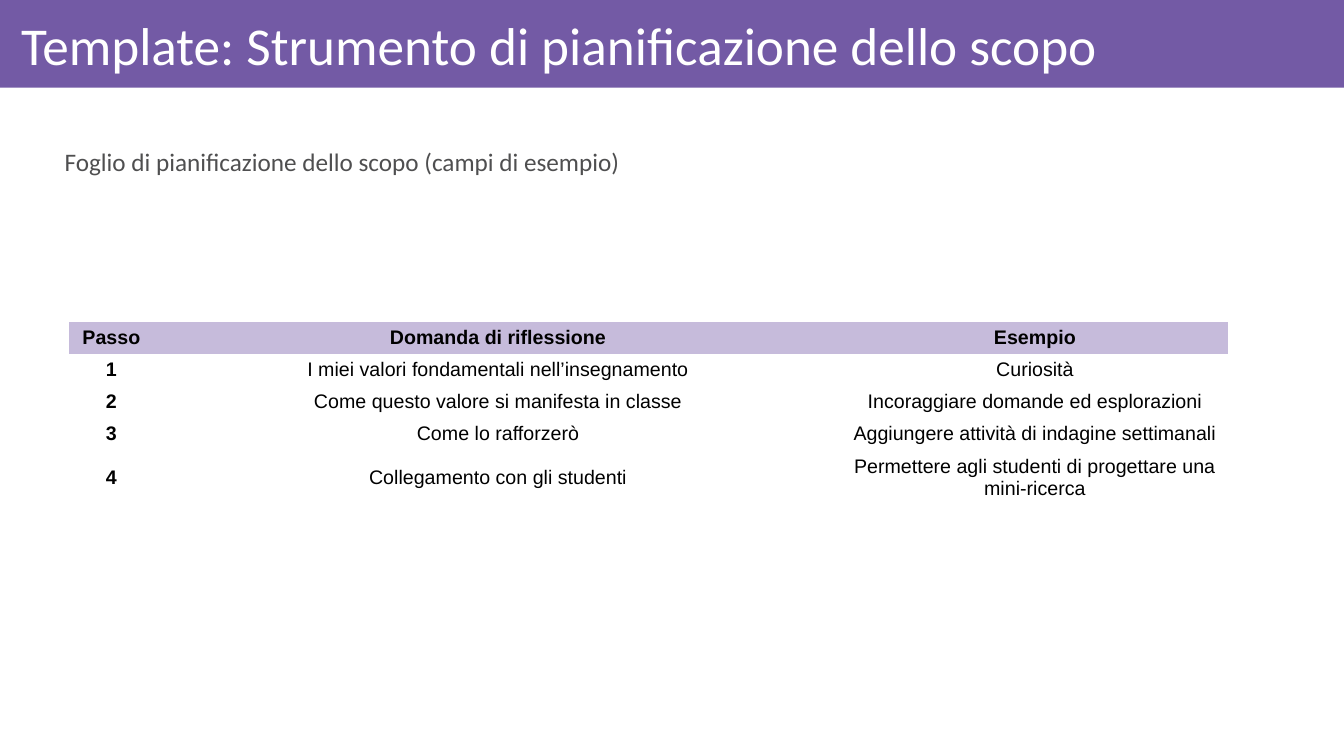
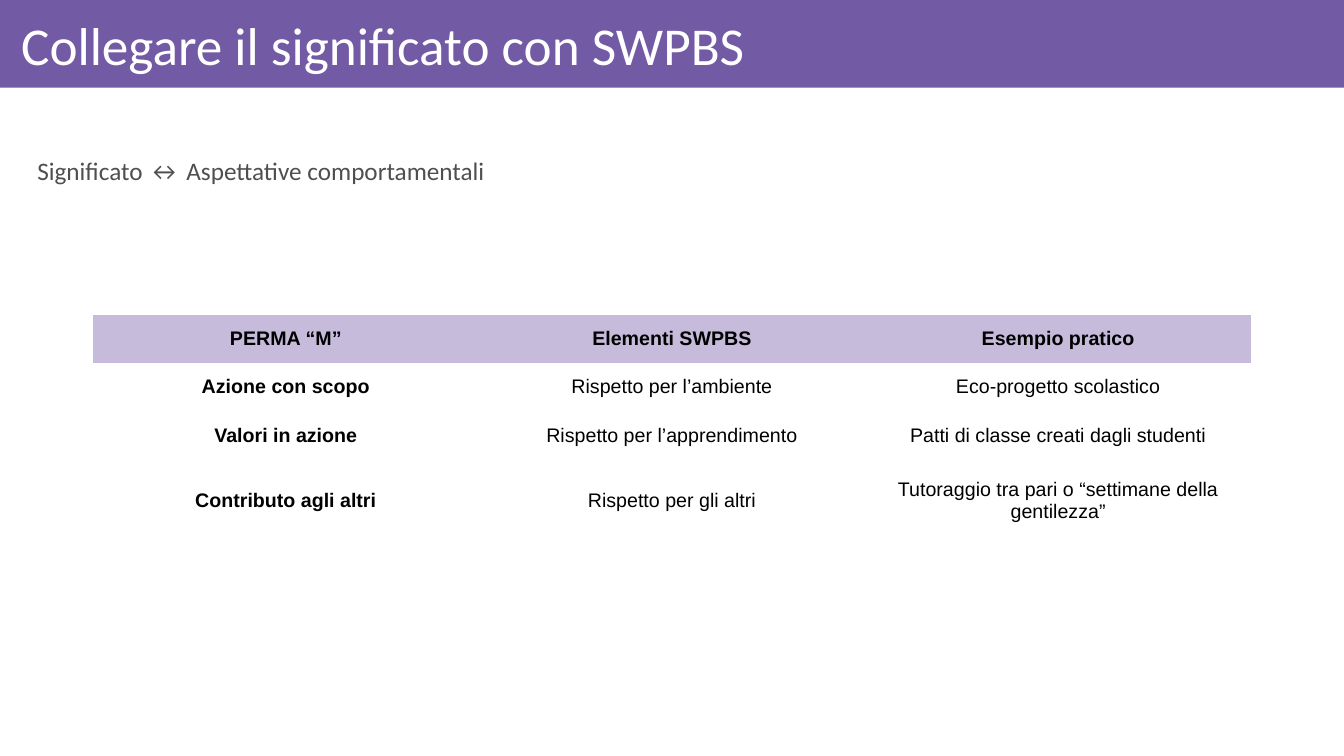
from lxml import etree
from pptx import Presentation
from pptx.dml.color import RGBColor
from pptx.enum.shapes import MSO_SHAPE
from pptx.enum.text import MSO_ANCHOR, MSO_AUTO_SIZE, PP_ALIGN
from pptx.oxml.ns import qn
from pptx.util import Inches, Pt

RECT = MSO_SHAPE.RECTANGLE
TOP, MIDDLE = MSO_ANCHOR.TOP, MSO_ANCHOR.MIDDLE
LEFT, CENTER = PP_ALIGN.LEFT, PP_ALIGN.CENTER
FIXED = MSO_AUTO_SIZE.NONE
PLAIN = "{2D5ABB26-0587-4C30-8999-92F81FD0307C}"  # table style without grid

HEX = {"band": "735AA5", "head": "C6BBDB", "title": "FFFFFF",
       "body": "4F4F50", "cell": "000000"}

FONT = {
    "title": {"name": "Calibri", "size": Pt(38), "bold": False},
    "body": {"name": "Calibri", "size": Pt(18), "bold": False},
    "cell": {"name": "Arial", "size": Pt(14)},
}
PARA = {
    "title": {"alignment": LEFT, "line_spacing": 0.9},
    "body": {"alignment": LEFT, "line_spacing": 1.15, "space_before": Pt(12)},
    "cell": {"alignment": CENTER},
}


def margins(left, top, right, bottom):
    return {"margin_left": Inches(left), "margin_top": Inches(top),
            "margin_right": Inches(right), "margin_bottom": Inches(bottom)}


FRAME = {
    "title": {"vertical_anchor": MIDDLE, "word_wrap": True,
              "auto_size": FIXED, **margins(0.1, 0.06, 0.06, 0.06)},
    "body": {"vertical_anchor": TOP, "word_wrap": True,
             "auto_size": FIXED, **margins(0.1, 0.05, 0.1, 0.05)},
}
CELL = {"vertical_anchor": MIDDLE, **margins(0.1, 0.05, 0.1, 0.05)}


def color(key):
    return RGBColor.from_string(HEX[key])


def apply(item, values):
    for name, value in values.items():
        setattr(item, name, value)


class Deck:
    def __init__(self):
        self.prs = Presentation()
        self.prs.slide_width = Inches(13.33)
        self.prs.slide_height = Inches(7.5)
        self.slide = None

    def page(self, title):
        """Start a slide with its band and title."""
        layout = self.prs.slide_layouts[1]
        self.slide = self.prs.slides.add_slide(layout)
        self.band()
        self.holder(self.slide.shapes.title, "title", title,
                    (0.11, 0.09, 13.06, 0.78))

    def band(self):
        shapes = self.slide.shapes
        band = shapes.add_shape(RECT, 0, 0, self.prs.slide_width, Inches(0.87))
        band.shadow.inherit = False
        band.fill.solid()
        band.fill.fore_color.rgb = color("band")
        band.line.fill.background()
        # Behind the placeholders
        shapes.title.element.addprevious(band.element)

    def text(self, para, kind, words):
        apply(para, PARA[kind])
        run = para.add_run()
        run.text = words
        apply(run.font, FONT[kind])
        run.font.color.rgb = color(kind)
        return run

    def holder(self, shape, kind, words, box):
        names = ("left", "top", "width", "height")
        apply(shape, dict(zip(names, map(Inches, box))))
        apply(shape.text_frame, FRAME[kind])
        para = shape.text_frame.paragraphs[0]
        self.text(para, kind, words)
        return para

    def body(self, words, box):
        para = self.holder(self.slide.placeholders[1], "body", words, box)
        # No bullet, no indent
        props = para._p.get_or_add_pPr()
        props.set("marL", "0")
        props.set("indent", "0")
        etree.SubElement(props, qn("a:buNone"))

    def table(self, left, top, widths, heights, data):
        frame = self.slide.shapes.add_table(
            len(data), len(widths), Inches(left), Inches(top),
            Inches(sum(widths)), Inches(sum(heights)))
        table = frame.table
        table.horz_banding = False
        table._tbl.tblPr.find(qn("a:tableStyleId")).text = PLAIN
        for col, width in zip(table.columns, widths):
            col.width = Inches(width)
        for row, height in zip(table.rows, heights):
            row.height = Inches(height)
        for r, line in enumerate(data):
            for c, words in enumerate(line):
                self.cell(table.cell(r, c), words, r == 0, c == 0)

    def cell(self, cell, words, head, first):
        apply(cell, CELL)
        if head:
            cell.fill.solid()
            cell.fill.fore_color.rgb = color("head")
        else:
            cell.fill.background()
        run = self.text(cell.text_frame.paragraphs[0], "cell", words)
        run.font.bold = head or first


def main():
    deck = Deck()

    # Planning sheet
    deck.page("Template: Strumento di pianificazione dello scopo")
    deck.body("Foglio di pianificazione dello scopo (campi di esempio)",
              (0.54, 1.36, 13.06, 5.78))
    deck.table(0.68, 3.19, (0.85, 6.82, 3.83), [0.31] * 4 + [0.43], [
        ("Passo", "Domanda di riflessione", "Esempio"),
        ("1", "I miei valori fondamentali nell’insegnamento", "Curiosità"),
        ("2", "Come questo valore si manifesta in classe",
         "Incoraggiare domande ed esplorazioni"),
        ("3", "Come lo rafforzerò",
         "Aggiungere attività di indagine settimanali"),
        ("4", "Collegamento con gli studenti",
         "Permettere agli studenti di progettare una mini-ricerca"),
    ])

    # Link with SWPBS
    deck.page("Collegare il significato con SWPBS")
    deck.body("Significato ↔ Aspettative comportamentali",
              (0.27, 1.45, 13.06, 3.88))
    deck.table(0.92, 3.12, [3.83] * 3, [0.48] * 3 + [0.81], [
        ("PERMA “M”", "Elementi SWPBS", "Esempio pratico"),
        ("Azione con scopo", "Rispetto per l’ambiente",
         "Eco-progetto scolastico"),
        ("Valori in azione", "Rispetto per l’apprendimento",
         "Patti di classe creati dagli studenti"),
        ("Contributo agli altri", "Rispetto per gli altri",
         "Tutoraggio tra pari o “settimane della gentilezza”"),
    ])

    deck.prs.save("out.pptx")


if __name__ == "__main__":
    main()
